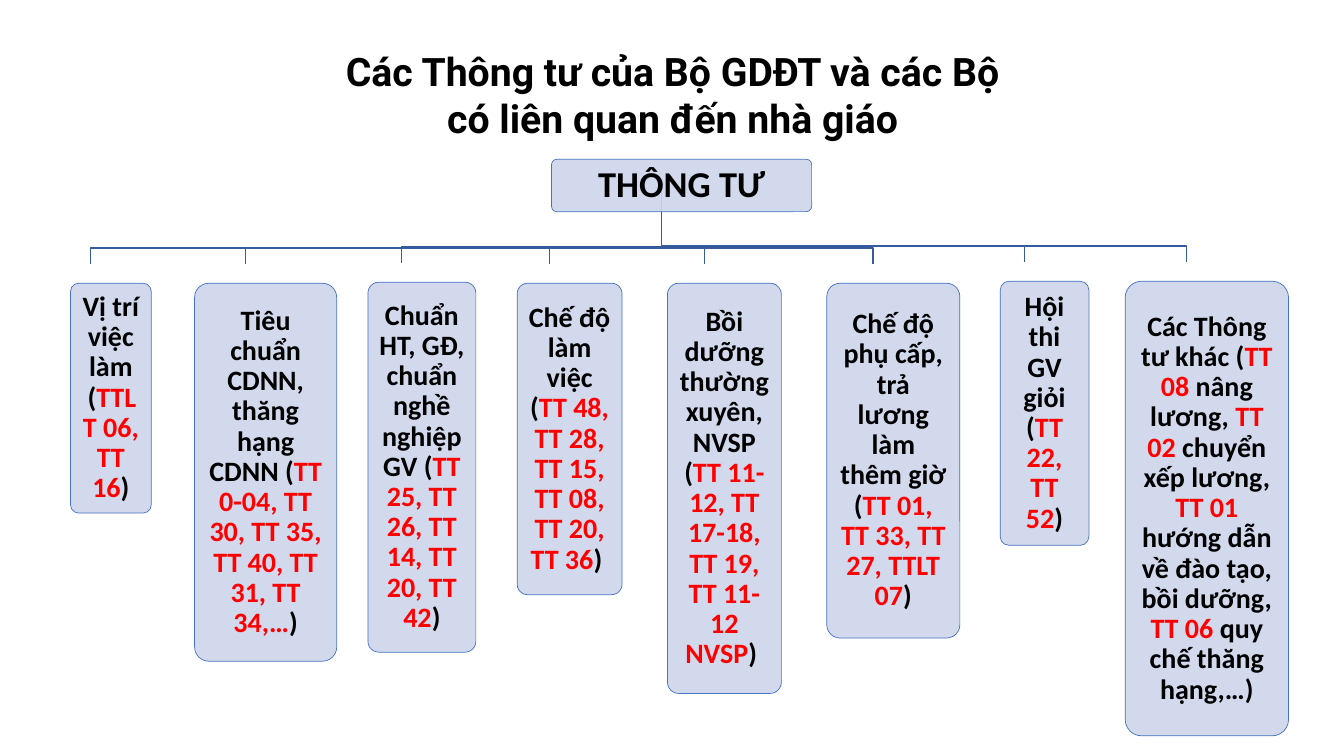
from pptx import Presentation
from pptx.dml.color import RGBColor
from pptx.enum.shapes import MSO_SHAPE as Shape
from pptx.enum.text import MSO_ANCHOR as Anchor, PP_ALIGN as Align
from pptx.oxml import parse_xml
from pptx.oxml.ns import nsdecls
from pptx.util import Inches, Pt

COLORS = {
    "text": "000000",
    "circular": "FF0000",
    "card": "CFD5EA",
    "border": "4472C4",
    "branch": "365B9D",
}

TRUNK_X, TRUNK_TOP = 6.56, 1.9
BRANCH_SHIFT, BRANCH_GAP, DROP = 0.2, 0.19, 0.16

CARDS = [
    (0.7, 2.81, 0.8, 2.28, ["Vị trí việc làm (", "TTLT 06, TT 16", ")"]),
    (1.93, 2.81, 1.41, 3.75, ["Tiêu chuẩn CDNN, thăng hạng CDNN (",
                              "TT 0-04, TT 30, TT 35, TT 40, TT 31, TT 34,…", ")"]),
    (3.65, 2.8, 1.07, 3.67, ["Chuẩn HT, GĐ, chuẩn nghề nghiệp GV (",
                             "TT 25, TT 26, TT 14, TT 20, TT 42", ")"]),
    (5.13, 2.81, 1.04, 3.09, ["Chế độ làm việc (",
                              "TT 48, TT 28, TT 15, TT 08, TT 20, TT 36", ") "]),
    (6.62, 2.81, 1.13, 4.07, ["Bồi dưỡng thường xuyên, NVSP (",
                              "TT 11-12, TT 17-18, TT 19, TT 11-12 NVSP", ") "]),
    (8.2, 2.81, 1.32, 3.52, ["Chế độ phụ cấp, trả lương làm thêm giờ (",
                             "TT 01, TT 33, TT 27, TTLT 07", ")"]),
    (9.92, 2.79, 0.88, 2.62, ["Hội thi GV giỏi (", "TT 22, TT 52", ")"]),
    (11.16, 2.79, 1.62, 4.51, ["Các Thông tư khác (", "TT 08 ", "nâng lương, ",
                               "TT 02 ", "chuyển xếp lương, ", "TT 01 ",
                               "hướng dẫn về đào tạo, bồi dưỡng, ", "TT 06 ",
                               "quy chế thăng hạng,…)"]),
]


class OrgChartSlide:
    def __init__(self, presentation):
        self.slide = presentation.slides.add_slide(presentation.slide_layouts[6])
        self.shapes = self.slide.shapes

    def color(self, name):
        return RGBColor.from_string(COLORS[name])

    def run(self, paragraph, text, size, font="Calibri", color="text"):
        run = paragraph.add_run()
        run.text = text
        run.font.name = font
        run.font.size = Pt(size)
        run.font.bold = True
        run.font.color.rgb = self.color(color)

    def frame(self, shape):
        frame = shape.text_frame
        frame.word_wrap = True
        frame.vertical_anchor = Anchor.MIDDLE
        frame.paragraphs[0].alignment = Align.CENTER
        return frame

    def title(self, left, top, width, height, lines):
        box = self.shapes.add_textbox(Inches(left), Inches(top), Inches(width), Inches(height))
        paragraph = self.frame(box).paragraphs[0]
        for index, line in enumerate(lines):
            if index:
                paragraph.add_line_break()
            self.run(paragraph, line, 28, "Roboto")

    def branch(self, end_x, end_y):
        elbow_y = end_y - DROP
        points = [(TRUNK_X, elbow_y), (end_x, elbow_y), (end_x, end_y)]
        builder = self.shapes.build_freeform(Inches(TRUNK_X), Inches(TRUNK_TOP))
        builder.add_line_segments([(Inches(x), Inches(y)) for x, y in points], close=False)
        shape = builder.convert_to_shape()
        shape.shadow.inherit = False
        shape.fill.background()
        shape.line.color.rgb = self.color("branch")
        shape.line.width = Pt(1)

    def card(self, left, top, width, height, texts, size=20, inset=0.08):
        shape = self.shapes.add_shape(Shape.ROUNDED_RECTANGLE, Inches(left), Inches(top),
                                      Inches(width), Inches(height))
        shape.adjustments[0] = 0.1
        shape.shadow.inherit = False
        shape.fill.solid()
        shape.fill.fore_color.rgb = self.color("card")
        fill_color = shape.fill._xPr.find(".//{*}srgbClr")
        fill_color.append(parse_xml(f'<a:alpha {nsdecls("a")} val="90000"/>'))
        shape.line.color.rgb = self.color("border")
        shape.line.width = Pt(0.5)
        frame = self.frame(shape)
        frame.margin_left = frame.margin_right = Inches(inset)
        frame.margin_top = frame.margin_bottom = Inches(inset)
        paragraph = frame.paragraphs[0]
        paragraph.line_spacing = 0.9
        for index, text in enumerate(texts):
            self.run(paragraph, text, size, color="circular" if index % 2 else "text")


def main():
    presentation = Presentation()
    presentation.slide_width = Inches(13.33)
    presentation.slide_height = Inches(7.5)
    chart = OrgChartSlide(presentation)
    chart.title(0.92, 0.21, 11.5, 1.45,
                ["Các Thông tư của Bộ GDĐT và các Bộ", "có liên quan đến nhà giáo"])
    for left, top, width, height, texts in reversed(CARDS):
        chart.branch(left + width / 2 - BRANCH_SHIFT, top - BRANCH_GAP)
    chart.card(5.47, 1.58, 2.58, 0.52, ["THÔNG TƯ"], size=26, inset=0.11)
    for card in CARDS:
        chart.card(*card)
    presentation.save("out.pptx")


if __name__ == "__main__":
    main()
